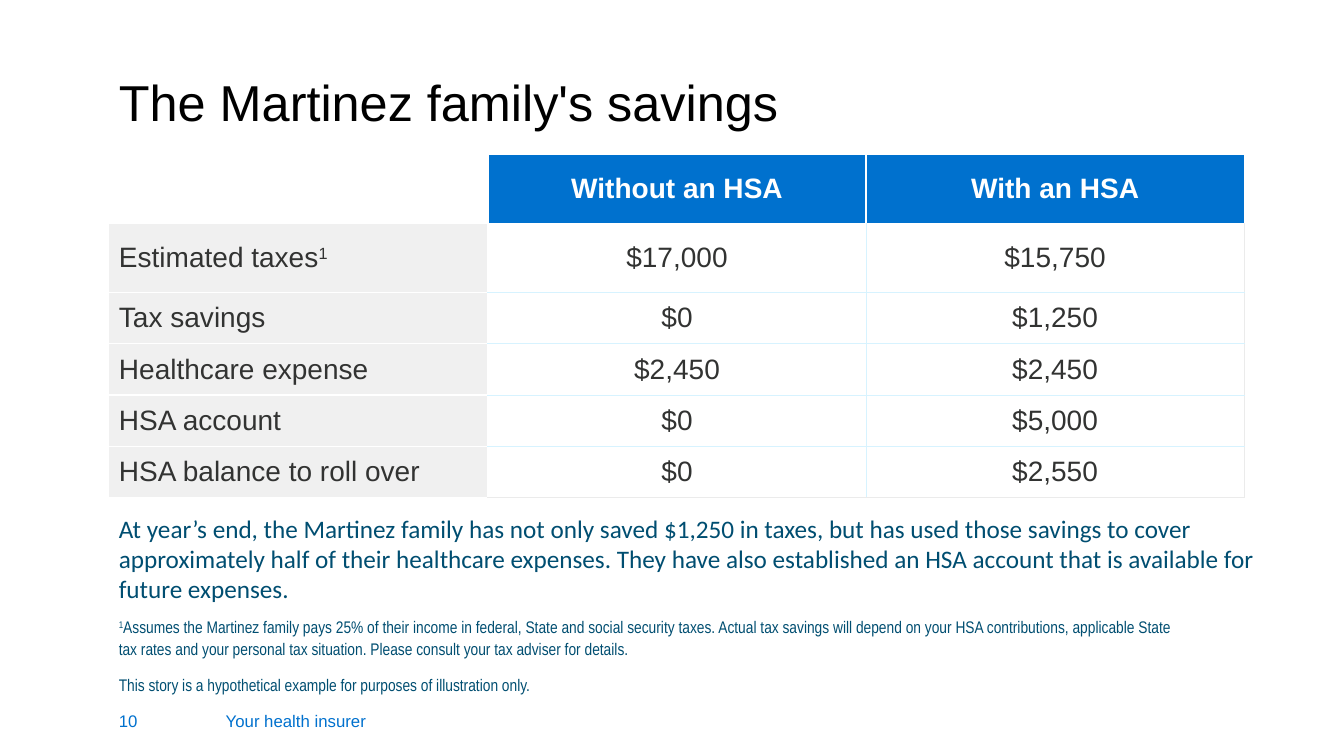
"""Build the slide comparing a family's savings with and without an HSA."""
from dataclasses import dataclass

from lxml import etree
from pptx import Presentation, util as u
from pptx.dml.color import RGBColor
from pptx.enum import text
from pptx.oxml.ns import qn

EMU_PER_PX = 9144
BLUE, TEAL, INK, WHITE = "0071CE", "004E71", "323332", "FFFFFF"
LABEL_FILL, SKY, SILVER = "F0F0F0", "D7F3FF", "EBEBEB"
LEFT, MIDDLE = text.PP_ALIGN.LEFT, text.MSO_ANCHOR.MIDDLE


@dataclass(frozen=True)
class Style:
    """Type settings shared by the paragraphs of one block."""
    size: int
    color: str
    face: str = "Arial"
    bold: bool = False
    align: text.PP_ALIGN = LEFT
    line_spacing: float = 1.0
    space_between: int = 0


@dataclass(frozen=True)
class Block:
    """A text block: px box, paragraphs with ^1 as superscript one, and style."""
    box: tuple[int, int, int, int]
    paragraphs: tuple[str, ...]
    style: Style
    anchor: text.MSO_ANCHOR = text.MSO_ANCHOR.TOP


TITLE = Block((108, 79, 1205, 50), ("The Martinez family's savings",),
              Style(36, "000000", line_spacing=0.9), MIDDLE)
BLOCKS = (
    Block((208, 700, 165, 30), ("Your health insurer",),
          Style(12, BLUE, align=text.PP_ALIGN.RIGHT)),
    Block((108, 606, 1080, 76), (
        "^1Assumes the Martinez family pays 25% of their income in federal, State and "
        "social security taxes. Actual tax savings will depend on your HSA contributions, "
        "applicable State tax rates and your personal tax situation. Please consult your "
        "tax adviser for details.",
        "This story is a hypothetical example for purposes of illustration only."),
        Style(12, TEAL, "Arial Narrow", line_spacing=1.07, space_between=10)),
    Block((108, 695, 100, 40), ("10",), Style(12, BLUE), MIDDLE),
    Block((108, 504, 1185, 101), (
        "At year’s end, the Martinez family has not only saved $1,250 in taxes, but has "
        "used those savings to cover approximately half of their healthcare expenses. "
        "They have also established an HSA account that is available for future expenses.",),
        Style(18, TEAL, "Calibri")),
)
SAVINGS = (
    ("", "Without an HSA", "With an HSA"),
    ("Estimated taxes^1", "$17,000", "$15,750"),
    ("Tax savings", "$0", "$1,250"),
    ("Healthcare expense", "$2,450", "$2,450"),
    ("HSA account", "$0", "$5,000"),
    ("HSA balance to roll over", "$0", "$2,550"),
)
COLUMN_WIDTHS = (376, 375, 375)
ROW_HEIGHTS = (69, 68, 51, 51, 51, 51)
HEADING = Style(20, WHITE, bold=True, align=text.PP_ALIGN.CENTER)
LABEL = Style(20, INK)
AMOUNT = Style(20, INK, align=text.PP_ALIGN.CENTER)


def px(length: int) -> u.Emu:
    """Turn px into EMU."""
    return u.Emu(length * EMU_PER_PX)


def rgb(color: str) -> RGBColor:
    """Turn a hex string into a colour."""
    return RGBColor.from_string(color)


def write(frame, paragraphs: tuple[str, ...], style: Style) -> None:
    """Write styled paragraphs into a text frame."""
    for index, wording in enumerate(paragraphs):
        paragraph = frame.add_paragraph() if index else frame.paragraphs[0]
        layout = {"alignment": style.align, "line_spacing": style.line_spacing,
                  "space_before": u.Pt(style.space_between if index else 0)}
        for name, value in layout.items():
            setattr(paragraph, name, value)
        before, mark, after = wording.partition("^1")
        for part in filter(None, (before, mark, after)):
            run = paragraph.add_run()
            run.text = part.lstrip("^")
            looks = {"size": u.Pt(style.size), "name": style.face, "bold": style.bold}
            for name, value in looks.items():
                setattr(run.font, name, value)
            run.font.color.rgb = rgb(style.color)
            if part == mark:
                run._r.get_or_add_rPr().set("baseline", "30000")


def fill_block(shape, block: Block) -> None:
    """Place a text shape and fill it."""
    for name, value in zip(("left", "top", "width", "height"), block.box):
        setattr(shape, name, px(value))
    frame = shape.text_frame
    settings = {"word_wrap": True, "auto_size": text.MSO_AUTO_SIZE.NONE,
                "vertical_anchor": block.anchor}
    for name, value in settings.items():
        setattr(frame, name, value)
    write(frame, block.paragraphs, block.style)


def cell_borders(row: int, column: int) -> dict[str, tuple[str, float]]:
    """Give the colour and width in points of each side of a cell."""
    white, sky, silver = (WHITE, 1), (SKY, 0.5), (SILVER, 1)
    if row == 0 or column == 0:
        return dict.fromkeys("LRTB", white)
    return {"L": white if column == 1 else sky,
            "R": silver if column == len(COLUMN_WIDTHS) - 1 else sky,
            "T": white if row == 1 else sky,
            "B": silver if row == len(ROW_HEIGHTS) - 1 else sky}


def draw_borders(cell, borders: dict[str, tuple[str, float]]) -> None:
    """Add border lines to a cell that has no fill yet."""
    properties = cell._tc.get_or_add_tcPr()
    for side, (color, width) in borders.items():
        line = etree.SubElement(properties, qn(f"a:ln{side}"), w=str(u.Pt(width)))
        solid = etree.SubElement(line, qn("a:solidFill"))
        etree.SubElement(solid, qn("a:srgbClr"), val=color)


def add_savings_table(slide) -> None:
    """Draw the comparison table."""
    table = slide.shapes.add_table(
        len(SAVINGS), len(COLUMN_WIDTHS), px(108), px(153),
        px(sum(COLUMN_WIDTHS)), px(sum(ROW_HEIGHTS))).table
    table.first_row = table.horz_banding = False
    for column, width in zip(table.columns, COLUMN_WIDTHS):
        column.width = px(width)
    for row, height in zip(table.rows, ROW_HEIGHTS):
        row.height = px(height)
    for r, wordings in enumerate(SAVINGS):
        for c, wording in enumerate(wordings):
            cell = table.cell(r, c)
            draw_borders(cell, cell_borders(r, c))
            cell.vertical_anchor = MIDDLE
            fill = (BLUE if r == 0 else LABEL_FILL) if (r == 0) != (c == 0) else None
            if fill:
                cell.fill.solid()
                cell.fill.fore_color.rgb = rgb(fill)
            else:
                cell.fill.background()
            style = HEADING if r == 0 else LABEL if c == 0 else AMOUNT
            write(cell.text_frame, (wording,), style)


def main() -> None:
    """Build and save the slide."""
    deck = Presentation()
    deck.slide_width, deck.slide_height = px(1333), px(750)
    slide = deck.slides.add_slide(deck.slide_layouts[5])
    fill_block(slide.shapes.title, TITLE)
    add_savings_table(slide)
    for block in BLOCKS:
        fill_block(slide.shapes.add_textbox(*map(px, block.box)), block)
    deck.save("out.pptx")


if __name__ == "__main__":
    main()
